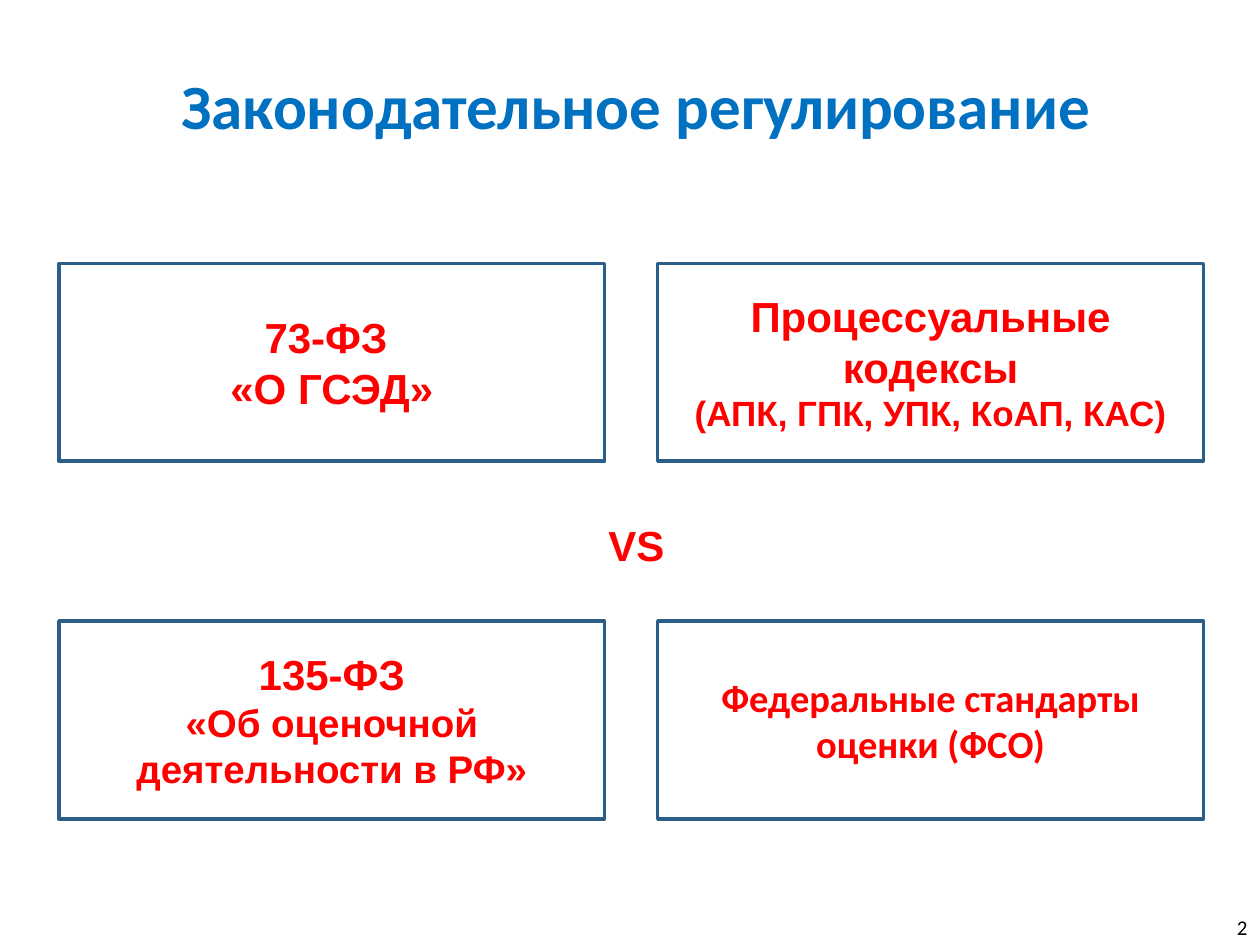
"""Build the slide that sets two pairs of legal sources against each other."""
from pptx import Presentation
from pptx.dml.color import RGBColor
from pptx.enum.shapes import MSO_SHAPE
from pptx.enum.text import MSO_ANCHOR, MSO_AUTO_SIZE, PP_ALIGN
from pptx.util import Cm, Pt

BLUE = RGBColor(0x00, 0x70, 0xC0)
EDGE = RGBColor(0x2B, 0x5F, 0x8A)
RED = RGBColor(0xFF, 0x00, 0x00)
BLACK = RGBColor(0x00, 0x00, 0x00)

TITLE = [("Законодательное регулирование", 36)]
VERSUS = [("VS", 24)]
NUMBER = [("2", 12)]
GRID = [
    [
        ("Arial", [("73-ФЗ ", 24), ("«О ГСЭД»", 24)]),
        ("Arial", [("Процессуальные кодексы", 24),
                   ("(АПК, ГПК, УПК, КоАП, КАС)", 20)]),
    ],
    [
        ("Arial", [("135-ФЗ", 24),
                   ("«Об оценочной деятельности в РФ»", 22)]),
        ("Calibri", [("Федеральные стандарты оценки (ФСО)", 22)]),
    ],
]

LEFT, TOP = 1.19, 5.31
WIDTH, HEIGHT = 11, 3.99
STEP_X, STEP_Y = 12.07, 7.21


def write(shape, lines, font, color, bold=True,
          align=PP_ALIGN.CENTER, anchor=MSO_ANCHOR.MIDDLE):
    frame = shape.text_frame
    frame.word_wrap = True
    frame.auto_size = MSO_AUTO_SIZE.NONE
    frame.vertical_anchor = anchor
    for i, (text, size) in enumerate(lines):
        para = frame.add_paragraph() if i else frame.paragraphs[0]
        para.alignment = align
        run = para.add_run()
        run.text = text
        run.font.name = font
        run.font.size = Pt(size)
        run.font.bold = bold
        run.font.color.rgb = color


def add_card(slide, row, col, font, lines):
    card = slide.shapes.add_shape(
        MSO_SHAPE.RECTANGLE, Cm(LEFT + col * STEP_X), Cm(TOP + row * STEP_Y),
        Cm(WIDTH), Cm(HEIGHT))
    card.shadow.inherit = False
    card.fill.background()
    card.line.color.rgb = EDGE
    card.line.width = Pt(2)
    write(card, lines, font, RED)


def main():
    deck = Presentation()
    deck.slide_width, deck.slide_height = Cm(25.4), Cm(19.05)
    slide = deck.slides.add_slide(deck.slide_layouts[5])

    title = slide.shapes.title
    title.left, title.top = Cm(2.59), Cm(1.22)
    title.width, title.height = Cm(20.47), Cm(1.8)
    write(title, TITLE, "Calibri", BLUE, anchor=MSO_ANCHOR.TOP)

    for row, cards in enumerate(GRID):
        for col, (font, lines) in enumerate(cards):
            add_card(slide, row, col, font, lines)

    versus = slide.shapes.add_textbox(Cm(9.3), Cm(10.34), Cm(7.06), Cm(1.27))
    write(versus, VERSUS, "Arial", RED, anchor=MSO_ANCHOR.TOP)

    number = slide.shapes.add_textbox(Cm(23.93), Cm(18.34), Cm(1.47), Cm(0.71))
    write(number, NUMBER, "Calibri", BLACK, bold=False, align=PP_ALIGN.RIGHT)
    frame = number.text_frame
    frame.margin_top = frame.margin_bottom = Cm(0.25)

    deck.save("out.pptx")


if __name__ == "__main__":
    main()
